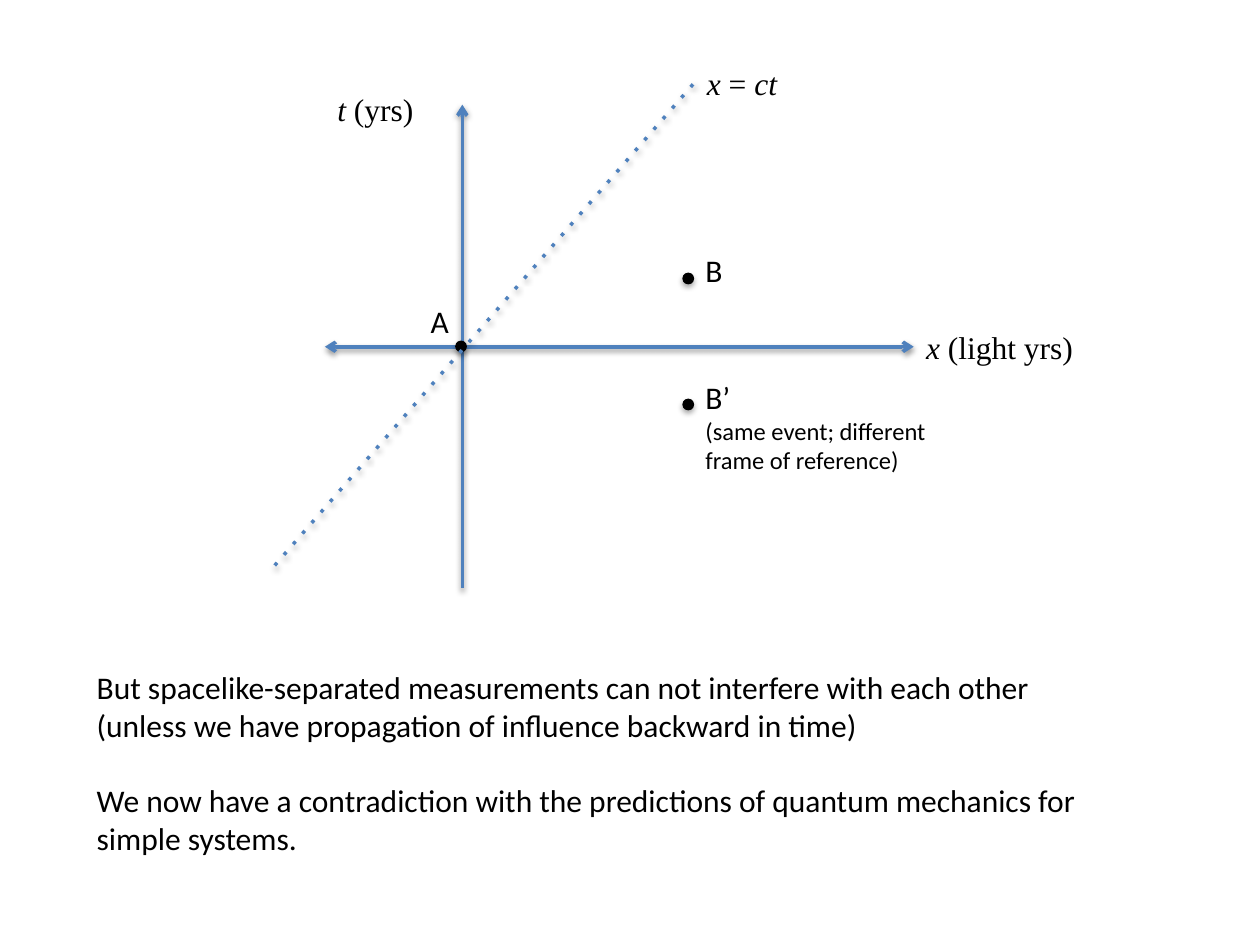
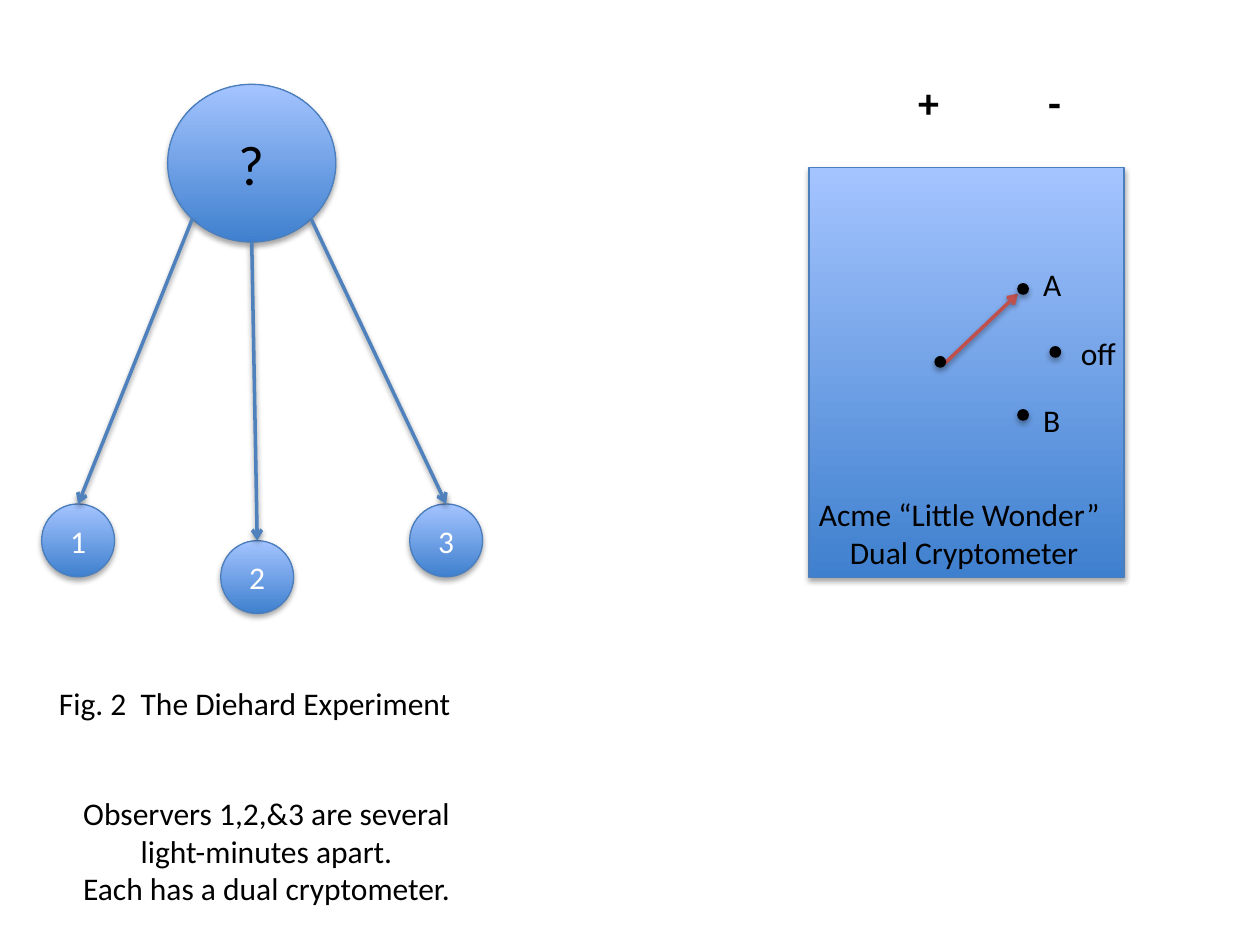
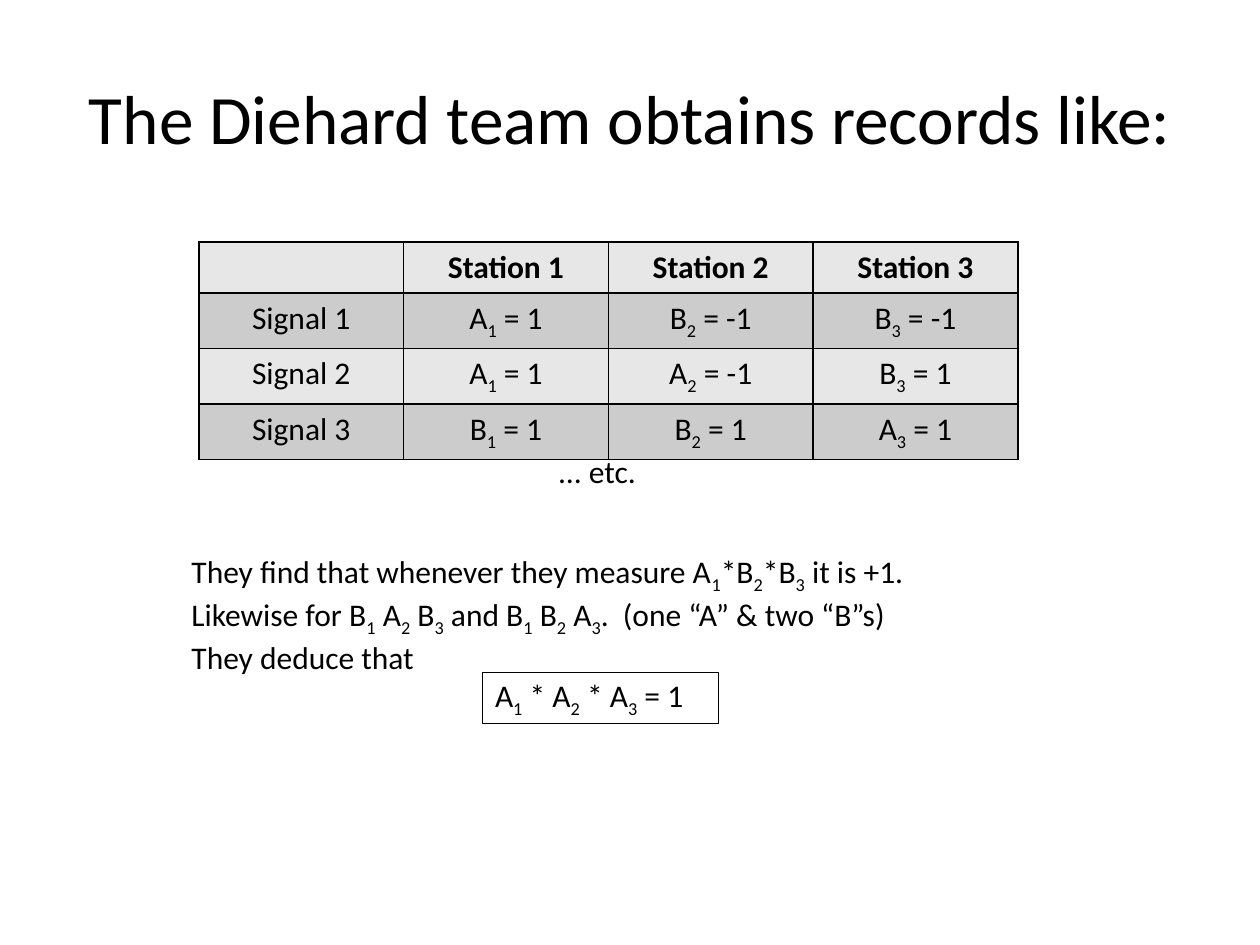
from dataclasses import dataclass
from math import cos, radians, sin

from lxml.etree import SubElement
from pptx import Presentation
from pptx.dml.color import RGBColor
from pptx.enum.shapes import MSO_CONNECTOR, MSO_SHAPE as SHAPE
from pptx.enum.text import MSO_ANCHOR as ANCHOR, MSO_AUTO_SIZE as AUTO_SIZE, PP_ALIGN as ALIGN
from pptx.oxml.ns import qn
from pptx.util import Cm, Pt


@dataclass(frozen=True)
class Theme:
    font: str = "Calibri"
    math_font: str = "Times New Roman"
    black: str = "000000"
    white: str = "FFFFFF"
    line: str = "4F81BD"
    outline: str = "4B7EBC"
    pointer: str = "C0504D"
    gradient: tuple = ("3F80CE", "A4C4FF")
    bands: tuple = ("E7E7E7", "CCCCCC")
    title: float = 39.6
    source: int = 32
    sign: int = 24
    body: int = 18
    small: int = 14
    thin: float = 0.75
    thick: int = 2
    dot: float = 0.21
    label_height: float = 1.02


THEME = Theme()

# Text markup: ~italic~ and |subscript|.
AXES = [
    ((9.32, 2.11), (9.32, 11.86), {"head": True}),
    ((6.55, 6.99), (18.42, 6.99), {"head": True, "tail": True}),
]
LIGHT_LINE = ((13.97, 1.7), (5.51, 11.43))
MATH_LABELS = [
    ("~t~ (yrs)", 6.55, 1.7, 2.11),
    ("~x~ (light yrs)", 18.42, 6.48, 3.53),
    ("~x~ = ~ct~", 14, 1.17, 2.16),
]
EVENT_LABELS = [("A", 8.43, 5.97, 0.89), ("B", 13.97, 4.93, 0.86)]
EVENT_DOTS = [(13.77, 5.51), (13.77, 8.05), (9.19, 6.88)]
MOVED_EVENT = ["B’", ("(same event; different frame of reference)", {"size": THEME.small})]
ARGUMENT = [
    "But spacelike-separated measurements can not interfere with each other "
    "(unless we have propagation of influence backward in time)",
    ("We now have a contradiction with the predictions of quantum mechanics for simple systems.",
     {"space_before": 21.6}),
]

SOURCE = (3.38, 1.7, 3.39, 3.18)
STATION_SIZE = 1.47
STATIONS = [("1", 0.84, 10.16, 135), ("2", 4.45, 10.9, 90), ("3", 8.26, 10.16, 45)]
FIGURE_TITLE = "Fig. 2  The Diehard Experiment"
OBSERVERS = ["Observers 1,2,&3 are several light-minutes apart.", "Each has a dual cryptometer."]
CRYPTOMETER = (16.31, 3.38, 6.35, 8.26)
SIGNS = [("+", 18.26, 1.42, 0.94), ("-", 20.88, 1.42, 0.76)]
POINTER = ((19.05, 7.32), (20.52, 5.92))
DIAL_DOTS = [(20.52, 5.72), (21.17, 6.99), (20.52, 8.26), (18.85, 7.19)]
DIAL_LABELS = [("A", 20.78, 5.21, 0.89), ("B", 20.78, 7.95, 0.86), ("off", 21.54, 6.6, 1.22)]
DEVICE_NAME = ["Acme “Little Wonder”", ("Dual Cryptometer", {"align": ALIGN.CENTER})]

RECORDS_TITLE = "The Diehard team obtains records like:"
RECORDS = [
    ("", "Station 1", "Station 2", "Station 3"),
    ("Signal 1", "A|1| = 1", "B|2| = -1", "B|3| = -1"),
    ("Signal 2", "A|1| = 1", "A|2| = -1", "B|3| = 1"),
    ("Signal 3", "B|1| = 1", "B|2| = 1", "A|3| = 1"),
]
ROW_HEIGHT = 1.03
FINDINGS = [
    "They find that whenever they measure A|1|*B|2|*B|3| it is +1.",
    "Likewise for B|1| A|2| B|3| and B|1| B|2| A|3|.  (one “A” & two “B”s)",
    "They deduce that",
]
DEDUCTION = "A|1| * A|2| * A|3| = 1"


def rgb(color):
    return RGBColor.from_string(color)


def add_node(parent, tag, **attributes):
    return SubElement(parent, qn(tag), attributes)


def split_runs(text):
    for i, part in enumerate(text.split("~")):
        for j, piece in enumerate(part.split("|")):
            if piece:
                yield piece, i % 2 == 1, j % 2 == 1


def write(frame, content, **options):
    items = [content] if isinstance(content, str) else content
    for index, item in enumerate(items):
        text, own = (item, {}) if isinstance(item, str) else item
        style = {"size": THEME.body, "font": THEME.font, "color": THEME.black,
                 "bold": False, "align": ALIGN.LEFT, "space_before": 0, **options, **own}
        paragraph = frame.add_paragraph() if index else frame.paragraphs[0]
        paragraph.alignment = style["align"]
        paragraph.space_before = Pt(style["space_before"])
        for piece, italic, subscript in split_runs(text):
            run = paragraph.add_run()
            run.text = piece
            run.font.name = style["font"]
            run.font.size = Pt(style["size"])
            run.font.bold = style["bold"]
            run.font.italic = italic
            run.font.color.rgb = rgb(style["color"])
            if subscript:
                run.font._element.set("baseline", "-25000")


def add_text(slide, content, left, top, width, height=THEME.label_height, wrap=False, **options):
    box = slide.shapes.add_textbox(Cm(left), Cm(top), Cm(width), Cm(height))
    box.text_frame.word_wrap = wrap
    box.text_frame.auto_size = AUTO_SIZE.SHAPE_TO_FIT_TEXT
    write(box.text_frame, content, **options)


def add_labels(slide, labels, **options):
    for label in labels:
        add_text(slide, *label, **options)


def add_shadow(shape, distance, alpha):
    effects = add_node(shape._element.spPr, "a:effectLst")
    shadow = add_node(effects, "a:outerShdw", blurRad="40000", dist=str(distance),
                      dir="5400000", rotWithShape="0")
    color = add_node(shadow, "a:srgbClr", val=THEME.black)
    add_node(color, "a:alpha", val=str(alpha * 1000))


def add_figure(slide, kind, left, top, width, height, fill, outline):
    shape = slide.shapes.add_shape(kind, Cm(left), Cm(top), Cm(width), Cm(height))
    if isinstance(fill, tuple):
        shape.fill.gradient()
        shape.fill.gradient_angle = 90
        for stop, color in zip(shape.fill.gradient_stops, fill):
            stop.color.rgb = rgb(color)
    else:
        shape.fill.solid()
        shape.fill.fore_color.rgb = rgb(fill)
    shape.line.color.rgb = rgb(outline)
    shape.line.width = Pt(THEME.thin)
    add_shadow(shape, 23000, 35)
    return shape


def add_glossy(slide, kind, *place):
    return add_figure(slide, kind, *place, THEME.gradient, THEME.outline)


def add_dots(slide, places):
    for left, top in places:
        add_figure(slide, SHAPE.OVAL, left, top, THEME.dot, THEME.dot, THEME.black, THEME.black)


def add_line(slide, start, end, color=THEME.line, head=False, tail=False, dotted=False):
    line = slide.shapes.add_connector(MSO_CONNECTOR.STRAIGHT, *map(Cm, start + end))
    line.line.color.rgb = rgb(color)
    line.line.width = Pt(THEME.thick)
    stroke = line.line._get_or_add_ln()
    if dotted:
        add_node(stroke, "a:prstDash", val="dot")
    if head:
        add_node(stroke, "a:headEnd", type="arrow")
    if tail:
        add_node(stroke, "a:tailEnd", type="arrow")
    add_shadow(line, 20000, 38)
    return line


def add_borders(cell):
    properties = cell._tc.get_or_add_tcPr()
    for side in ("a:lnL", "a:lnR", "a:lnT", "a:lnB"):
        border = add_node(properties, side, w=str(Pt(1)))
        add_node(add_node(border, "a:solidFill"), "a:srgbClr", val=THEME.black)


def build_spacetime(slide):
    for start, end, arrows in AXES:
        add_line(slide, start, end, **arrows)
    add_labels(slide, MATH_LABELS, font=THEME.math_font)
    add_labels(slide, EVENT_LABELS)
    add_text(slide, MOVED_EVENT, 13.97, 7.49, 6.15, 2.24, wrap=True)
    add_dots(slide, EVENT_DOTS)
    add_text(slide, ARGUMENT, 1.7, 13.34, 20.75, 4.11, wrap=True)
    add_line(slide, *LIGHT_LINE, dotted=True)


def build_experiment(slide):
    add_text(slide, FIGURE_TITLE, 0.94, 13.67, 8.48)
    source = add_glossy(slide, SHAPE.OVAL, *SOURCE)
    write(source.text_frame, "?", size=THEME.source, align=ALIGN.CENTER)
    left, top, width, height = SOURCE
    for name, station_left, station_top, angle in STATIONS:
        station = add_glossy(slide, SHAPE.OVAL, station_left, station_top, STATION_SIZE, STATION_SIZE)
        write(station.text_frame, name, color=THEME.white, align=ALIGN.CENTER)
        start = (left + width / 2 * (1 + cos(radians(angle))),
                 top + height / 2 * (1 + sin(radians(angle))))
        end = (station_left + STATION_SIZE / 2, station_top)
        add_line(slide, start, end, tail=True).end_connect(station, 0)
    add_text(slide, OBSERVERS, 1.3, 15.88, 8.15, 2.57, wrap=True, align=ALIGN.CENTER)

    add_glossy(slide, SHAPE.RECTANGLE, *CRYPTOMETER)
    add_labels(slide, SIGNS, size=THEME.sign, bold=True)
    add_line(slide, *POINTER, color=THEME.pointer, tail=True)
    add_dots(slide, DIAL_DOTS)
    add_labels(slide, DIAL_LABELS)
    add_text(slide, DEVICE_NAME, 16.26, 9.86, 6.35, 1.8, wrap=True)


def build_records(slide):
    title = slide.shapes.title
    title.left, title.top, title.width, title.height = Cm(1.27), Cm(0.76), Cm(22.86), Cm(3.18)
    title.text_frame.vertical_anchor = ANCHOR.MIDDLE
    write(title.text_frame, RECORDS_TITLE, size=THEME.title, align=ALIGN.CENTER)

    table = slide.shapes.add_table(len(RECORDS), len(RECORDS[0]), Cm(4.01), Cm(4.88),
                                   Cm(16.51), Cm(ROW_HEIGHT * len(RECORDS))).table
    for row, record in enumerate(RECORDS):
        for column, value in enumerate(record):
            cell = table.cell(row, column)
            add_borders(cell)
            cell.fill.solid()
            cell.fill.fore_color.rgb = rgb(THEME.bands[row % 2])
            write(cell.text_frame, value, bold=row == 0, align=ALIGN.CENTER)

    add_text(slide, FINDINGS, 3.61, 11, 15.88, 2.57, wrap=True)
    add_text(slide, "... etc.", 11, 8.99, 2.11, wrap=True)
    result = slide.shapes.add_shape(SHAPE.RECTANGLE, Cm(9.73), Cm(13.56), Cm(4.75),
                                    Cm(THEME.label_height))
    result.shadow.inherit = False
    result.fill.background()
    result.line.color.rgb = rgb(THEME.black)
    result.line.width = Pt(THEME.thin)
    write(result.text_frame, DEDUCTION)


def main():
    presentation = Presentation()
    presentation.slide_width, presentation.slide_height = Cm(25.4), Cm(19.05)
    title_only, blank = presentation.slide_layouts[5], presentation.slide_layouts[6]
    for layout, build in ((blank, build_spacetime), (blank, build_experiment),
                          (title_only, build_records)):
        build(presentation.slides.add_slide(layout))
    presentation.save("out.pptx")


if __name__ == "__main__":
    main()
